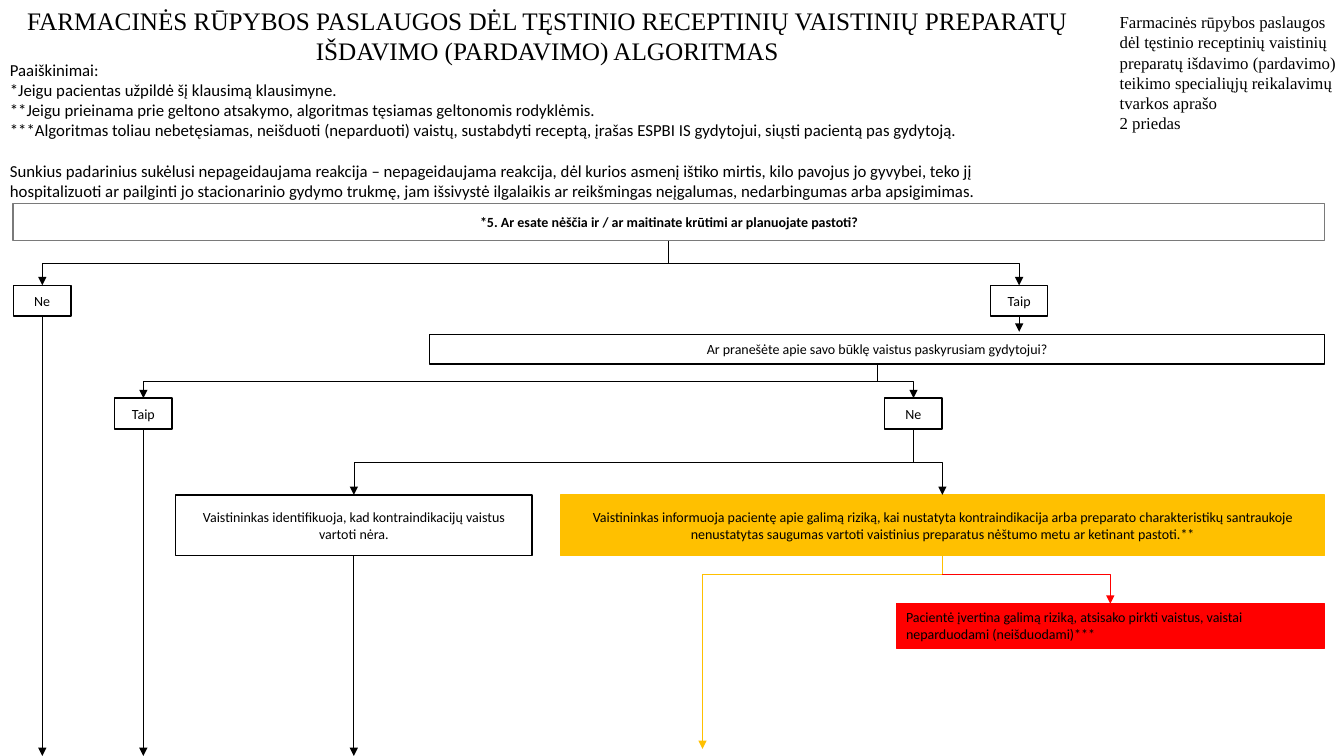
from lxml.etree import SubElement
from pptx import Presentation
from pptx.dml.color import RGBColor
from pptx.enum.shapes import MSO_CONNECTOR, MSO_SHAPE
from pptx.enum.text import MSO_ANCHOR, PP_ALIGN
from pptx.oxml.ns import qn
from pptx.util import Pt

BLACK, WHITE, GREY = "000000", "FFFFFF", "7A7A7A"
YELLOW, RED = "FFC000", "FF0000"
RIGHT_EDGE, SLIDE_BOTTOM = 946.1, 540
CHOICE_WIDTH, CHOICE_HEIGHT = 41, 22
ACTION_TOP, ACTION_HEIGHT = 353.5, 43.4
BRANCH_Y = 410.4

TITLE = ("FARMACINĖS RŪPYBOS PASLAUGOS DĖL TĘSTINIO RECEPTINIŲ VAISTINIŲ "
         "PREPARATŲ IŠDAVIMO (PARDAVIMO) ALGORITMAS")
ANNEX = [
    "Farmacinės rūpybos paslaugos dėl tęstinio receptinių vaistinių preparatų "
    "išdavimo (pardavimo) teikimo specialiųjų reikalavimų tvarkos aprašo",
    "2 priedas",
]
EXPLANATIONS = [
    "Paaiškinimai:",
    "*Jeigu pacientas užpildė šį klausimą klausimyne.",
    "**Jeigu prieinama prie geltono atsakymo, algoritmas tęsiamas geltonomis rodyklėmis.",
    "***Algoritmas toliau nebetęsiamas, neišduoti (neparduoti) vaistų, sustabdyti "
    "receptą, įrašas ESPBI IS gydytojui, siųsti pacientą pas gydytoją.",
    "Sunkius padarinius sukėlusi nepageidaujama reakcija – nepageidaujama reakcija, "
    "dėl kurios asmenį ištiko mirtis, kilo pavojus jo gyvybei, teko jį hospitalizuoti "
    "ar pailginti jo stacionarinio gydymo trukmę, jam išsivystė ilgalaikis ar "
    "reikšmingas neįgalumas, nedarbingumas arba apsigimimas.",
]


def color(hex_code):
    """Turn a hex string into a colour."""
    return RGBColor.from_string(hex_code)


def write(frame, paragraphs, size, font="Calibri", align=PP_ALIGN.LEFT, bold=False):
    """Fill a text frame with one run per paragraph."""
    frame.word_wrap = True
    for index, words in enumerate(paragraphs):
        paragraph = frame.paragraphs[0] if index == 0 else frame.add_paragraph()
        paragraph.alignment = align
        run = paragraph.add_run()
        run.text = words
        run.font.name = font
        run.font.size = Pt(size)
        run.font.bold = bold
        run.font.color.rgb = color(BLACK)


def add_note(slide, left, top, width, height, paragraphs, size, **style):
    """Add free-standing text and return its frame."""
    note = slide.shapes.add_textbox(Pt(left), Pt(top), Pt(width), Pt(height))
    write(note.text_frame, paragraphs, size, **style)
    return note.text_frame


def add_box(slide, left, top, width, height, words, fill=WHITE, border=BLACK,
            weight=1, align=PP_ALIGN.CENTER, anchor=MSO_ANCHOR.MIDDLE, bold=False):
    """Add a step of the algorithm."""
    box = slide.shapes.add_shape(
        MSO_SHAPE.RECTANGLE, Pt(left), Pt(top), Pt(width), Pt(height))
    box.shadow.inherit = False
    box.fill.solid()
    box.fill.fore_color.rgb = color(fill)
    box.line.color.rgb = color(border)
    box.line.width = Pt(weight)
    box.text_frame.vertical_anchor = anchor
    write(box.text_frame, [words], 10, align=align, bold=bold)
    return box


def add_choice(slide, center, top, answer):
    """Add a small answer box centred on a given x."""
    return add_box(slide, center - CHOICE_WIDTH / 2, top,
                   CHOICE_WIDTH, CHOICE_HEIGHT, answer)


def center_x(box):
    """Give the horizontal centre of a box in points."""
    return (box.left + box.width / 2) / Pt(1)


def bottom_y(box):
    """Give the lower edge of a box in points."""
    return (box.top + box.height) / Pt(1)


def add_link(slide, kind, x1, y1, x2, y2, hue=BLACK, arrow=True):
    """Add a thin connector, by default with an arrowhead at its end."""
    link = slide.shapes.add_connector(kind, Pt(x1), Pt(y1), Pt(x2), Pt(y2))
    link.line.color.rgb = color(hue)
    link.line.width = Pt(0.5)
    if arrow:
        SubElement(link.line._get_or_add_ln(), qn("a:tailEnd"), type="triangle")
    SubElement(link._element.spPr, qn("a:effectLst"))
    return link


def drop(slide, box, end_y, hue=BLACK, arrow=True):
    """Run a line straight down from a box."""
    x = center_x(box)
    add_link(slide, MSO_CONNECTOR.STRAIGHT, x, bottom_y(box), x, end_y, hue, arrow)


def fork(slide, parent, *children):
    """Link a box to each box below it with an elbow turned on its side."""
    x1, y1 = center_x(parent), bottom_y(parent)
    for child in children:
        x2, y2 = center_x(child), child.top / Pt(1)
        middle_x, middle_y = (x1 + x2) / 2, (y1 + y2) / 2
        half_run, half_fall = abs(x2 - x1) / 2, (y2 - y1) / 2
        rightward = x2 > x1
        reach = -half_fall if rightward else half_fall
        elbow = add_link(slide, MSO_CONNECTOR.ELBOW,
                         middle_x - reach, middle_y - half_run,
                         middle_x + reach, middle_y + half_run)
        degrees = 270 if rightward else 90
        elbow._element.spPr.xfrm.set("rot", str(degrees * 60000))


def corner(slide, x1, y1, x2, y2, hue):
    """Add an arrow that runs sideways and then down."""
    turn = add_link(slide, MSO_CONNECTOR.ELBOW, x1, y1, x2, y2, hue)
    turn._element.spPr.find(qn("a:prstGeom")).set("prst", "bentConnector2")


def add_header(slide):
    """Add the title, the annex label and the explanations."""
    explanations = add_note(slide, 0, 38.9, 738.7, 174, EXPLANATIONS, 12)
    explanations.paragraphs[-1].space_before = Pt(14.6)
    add_note(slide, 792.7, 5, 175, 108.7, ANNEX, 12, font="Times New Roman")
    add_note(slide, -10.8, 0, 803.5, 51.8, [TITLE], 18,
             font="Times New Roman", align=PP_ALIGN.CENTER)


def add_algorithm(slide):
    """Add the questions, answers, actions and the arrows between them."""
    pregnancy = add_box(
        slide, 9.4, 145.4, RIGHT_EDGE - 9.4, 26.6,
        "*5. Ar esate nėščia ir / ar maitinate krūtimi ar planuojate pastoti?",
        border=GREY, bold=True)
    not_pregnant = add_choice(slide, 30.2, 203.8, "Ne")
    pregnant = add_choice(slide, 728, 203.8, "Taip")
    doctor_told = add_box(
        slide, 306.7, 239, RIGHT_EDGE - 306.7, 21,
        "Ar pranešėte apie savo būklę vaistus paskyrusiam gydytojui?")
    told = add_choice(slide, 102.4, 284.4, "Taip")
    not_told = add_choice(slide, 652.5, 284.4, "Ne")
    no_risk = add_box(
        slide, 125.3, ACTION_TOP, 254.9, ACTION_HEIGHT,
        "Vaistininkas identifikuoja, kad kontraindikacijų vaistus vartoti nėra.")
    risk = add_box(
        slide, 400.3, ACTION_TOP, RIGHT_EDGE - 400.3, ACTION_HEIGHT,
        "Vaistininkas informuoja pacientę apie galimą riziką, kai nustatyta "
        "kontraindikacija arba preparato charakteristikų santraukoje nenustatytas "
        "saugumas vartoti vaistinius preparatus nėštumo metu ar ketinant pastoti.**",
        fill=YELLOW, border=YELLOW)
    refusal = add_box(
        slide, 640.1, 431.3, RIGHT_EDGE - 640.1, 31.7,
        "Pacientė įvertina galimą riziką, atsisako pirkti vaistus, vaistai "
        "neparduodami (neišduodami)***",
        fill=RED, border=RED, weight=0.75,
        align=PP_ALIGN.LEFT, anchor=MSO_ANCHOR.TOP)

    fork(slide, pregnancy, not_pregnant, pregnant)
    drop(slide, pregnant, 237)
    fork(slide, doctor_told, told, not_told)
    fork(slide, not_told, no_risk, risk)
    for ending in (not_pregnant, told, no_risk):
        drop(slide, ending, SLIDE_BOTTOM)
    drop(slide, risk, BRANCH_Y, YELLOW, arrow=False)
    corner(slide, center_x(risk), BRANCH_Y, center_x(refusal), 431.3, RED)
    corner(slide, center_x(risk), BRANCH_Y, 501.8, 535, YELLOW)


def main():
    """Build the slide and save it."""
    deck = Presentation()
    deck.slide_width, deck.slide_height = Pt(960), Pt(SLIDE_BOTTOM)
    slide = deck.slides.add_slide(deck.slide_layouts[6])
    add_header(slide)
    add_algorithm(slide)
    deck.save("out.pptx")


if __name__ == "__main__":
    main()
